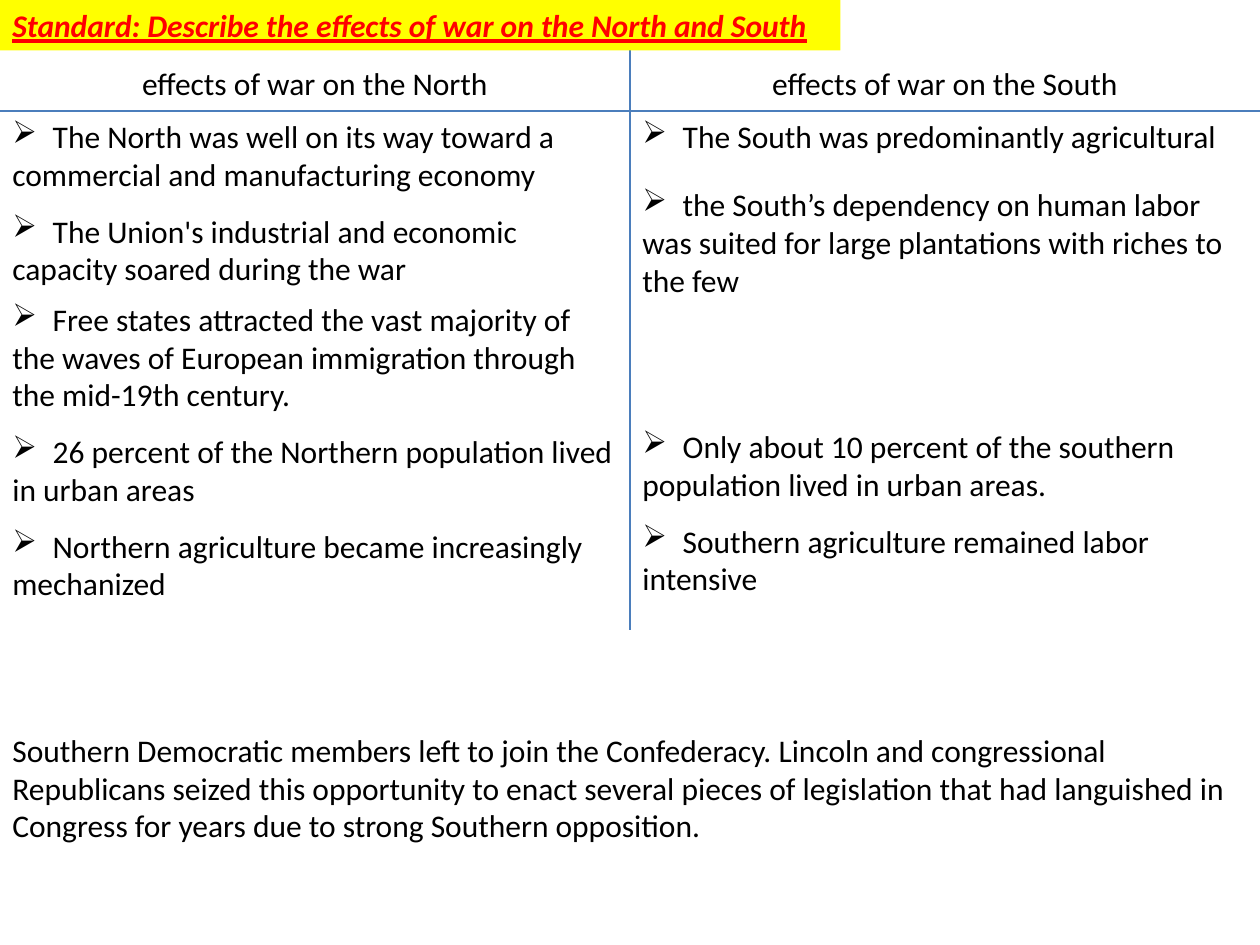
from dataclasses import dataclass

from lxml.etree import SubElement
from pptx import Presentation
from pptx.dml.color import RGBColor
from pptx.enum.shapes import MSO_CONNECTOR, MSO_SHAPE
from pptx.enum.text import MSO_ANCHOR, MSO_AUTO_SIZE as AutoSize, PP_ALIGN as Align
from pptx.oxml.ns import qn
from pptx.util import Inches, Pt


@dataclass(frozen=True)
class Theme:
    font: str = "Calibri"
    size: Pt = Pt(18)
    text: RGBColor = RGBColor(0, 0, 0)
    title: RGBColor = RGBColor(255, 0, 0)
    banner: RGBColor = RGBColor(255, 255, 0)
    rule: RGBColor = RGBColor(0x4B, 0x7E, 0xBC)
    rule_width: Pt = Pt(0.75)
    bullet_font: str = "Wingdings"
    bullet: str = "Ø"
    bullet_gap: Inches = Inches(0.32)


@dataclass(frozen=True)
class TextBlock:
    text: str
    left: float
    top: float
    width: float
    height: float
    bulleted: bool = False
    align: Align = Align.LEFT
    wrap: bool = True


@dataclass(frozen=True)
class Rule:
    start: tuple[float, float]
    end: tuple[float, float]


THEME = Theme()
COLUMN = 5
HEADER_TOP, HEADER_BOTTOM = 0.46, 0.88
TWO_LINES, THREE_LINES = 0.71, 1.01

TITLE = TextBlock("Standard: Describe the effects of war on the North and South", 0, 0, 6.67, 0.4)
HEADERS = [
    TextBlock(f"effects of war on the {side}", index * COLUMN, HEADER_TOP, COLUMN,
              HEADER_BOTTOM - HEADER_TOP, align=Align.CENTER)
    for index, side in enumerate(("North", "South"))
]
RULES = [
    Rule((COLUMN, 0), (COLUMN, 5)),
    Rule((0, HEADER_BOTTOM), (2 * COLUMN, HEADER_BOTTOM)),
]
NORTH = [
    ("The North was well on its way toward a commercial and manufacturing economy",
     HEADER_BOTTOM, TWO_LINES),
    ("The Union's industrial and economic capacity soared during the war", 1.63, TWO_LINES),
    ("Free states attracted the vast majority of the waves of European immigration "
     "through the mid-19th century.", 2.33, THREE_LINES),
    ("26 percent of the Northern population lived in urban areas", 3.38, TWO_LINES),
    ("Northern agriculture became increasingly mechanized", 4.13, TWO_LINES),
]
SOUTH = [
    ("the South’s dependency on human labor was suited for large plantations "
     "with riches to the few", 1.42, THREE_LINES),
    ("Only about 10 percent of the southern population lived in urban areas.", 3.34, TWO_LINES),
    ("Southern agriculture remained labor intensive", 4.09, TWO_LINES),
]
POINTS = [
    TextBlock(text, index * COLUMN, top, COLUMN, height, bulleted=True)
    for index, points in enumerate((NORTH, SOUTH))
    for text, top, height in points
]
SOUTH_OPENING = TextBlock("The South was predominantly agricultural", COLUMN, HEADER_BOTTOM,
                          4.8, 0.4, bulleted=True, wrap=False)
SUMMARY = TextBlock(
    "Southern Democratic members left to join the Confederacy. Lincoln and congressional "
    "Republicans seized this opportunity to enact several pieces of legislation that had "
    "languished in Congress for years due to strong Southern opposition.",
    0, 5.75, 2 * COLUMN, THREE_LINES)


def bounds(block: TextBlock) -> list[Inches]:
    return [Inches(value) for value in (block.left, block.top, block.width, block.height)]


def add_bullet(paragraph) -> None:
    properties = paragraph._p.get_or_add_pPr()
    properties.set("marL", "0")
    properties.set("indent", "0")
    SubElement(properties, qn("a:buFont"), typeface=THEME.bullet_font)
    SubElement(properties, qn("a:buChar"), char=THEME.bullet)
    tabs = SubElement(properties, qn("a:tabLst"))
    SubElement(tabs, qn("a:tab"), pos=str(THEME.bullet_gap), algn="l")


def write_text(shape, block: TextBlock, color: RGBColor):
    frame = shape.text_frame
    frame.word_wrap = block.wrap
    frame.auto_size = AutoSize.SHAPE_TO_FIT_TEXT
    frame.vertical_anchor = MSO_ANCHOR.TOP
    paragraph = frame.paragraphs[0]
    paragraph.text = f"\t{block.text}" if block.bulleted else block.text
    paragraph.alignment = block.align
    if block.bulleted:
        add_bullet(paragraph)
    font = paragraph.font
    font.name, font.size = THEME.font, THEME.size
    font.color.rgb = color
    return font


def add_text(slide, block: TextBlock) -> None:
    write_text(slide.shapes.add_textbox(*bounds(block)), block, THEME.text)


def add_title(slide, block: TextBlock) -> None:
    shape = slide.shapes.add_shape(MSO_SHAPE.RECTANGLE, *bounds(block))
    shape.shadow.inherit = False
    shape.fill.solid()
    shape.fill.fore_color.rgb = THEME.banner
    shape.line.fill.background()
    font = write_text(shape, block, THEME.title)
    font.bold = font.italic = font.underline = True


def add_rule(slide, rule: Rule) -> None:
    ends = [Inches(value) for value in (*rule.start, *rule.end)]
    connector = slide.shapes.add_connector(MSO_CONNECTOR.STRAIGHT, *ends)
    connector.line.color.rgb = THEME.rule
    connector.line.width = THEME.rule_width
    SubElement(connector._element.spPr, qn("a:effectLst"))


def main() -> None:
    """Build the comparison of the war's effects on North and South."""
    presentation = Presentation()
    presentation.slide_width, presentation.slide_height = Inches(10), Inches(7.5)
    slide = presentation.slides.add_slide(presentation.slide_layouts[6])
    for header in HEADERS:
        add_text(slide, header)
    for rule in RULES:
        add_rule(slide, rule)
    for block in (*POINTS, SOUTH_OPENING, SUMMARY):
        add_text(slide, block)
    add_title(slide, TITLE)
    presentation.save("out.pptx")


if __name__ == "__main__":
    main()
